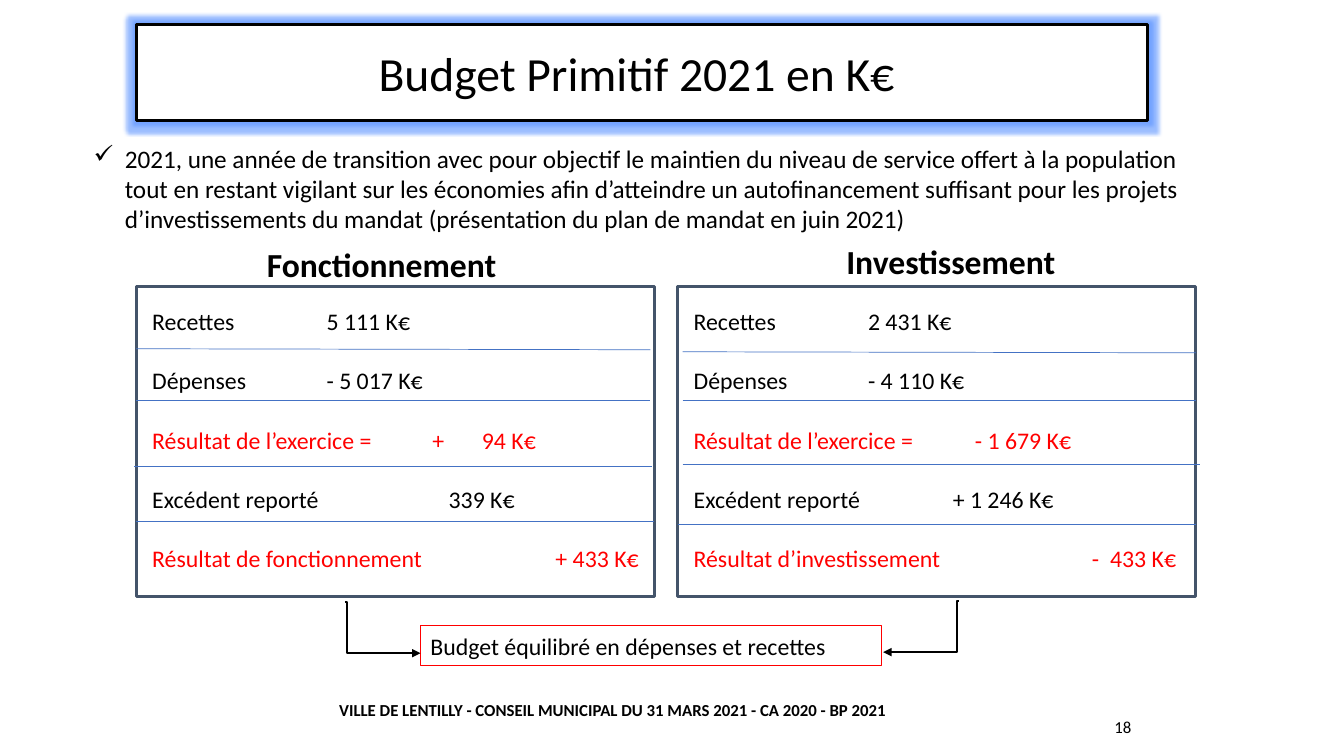
from dataclasses import dataclass

from lxml import etree
from pptx import Presentation
from pptx.dml import color
from pptx.enum import shapes, text
from pptx.oxml import ns
from pptx.util import Inches, Pt


@dataclass(frozen=True)
class Theme:
    font: str = "Calibri"
    black: str = "000000"
    white: str = "FFFFFF"
    red: str = "FF0000"
    frame: str = "44546A"
    rule: str = "4472C4"
    glow: str = "5B93FF"
    title: int = 34
    heading: int = 24
    body: int = 18
    row: int = 17
    footer: int = 12


@dataclass(frozen=True)
class Box:
    left: float
    top: float
    width: float
    height: float


@dataclass(frozen=True)
class Row:
    cells: tuple[str, ...]
    tabs: tuple[float, ...]
    result: bool = False


@dataclass(frozen=True)
class Panel:
    left: float
    heading: str
    heading_box: Box
    rows: tuple[Row, ...]
    rules: tuple[tuple[float, float, float, float], ...]  # x1, y1, x2, y2


THEME = Theme()
PANEL_TOP, PANEL_WIDTH, PANEL_HEIGHT = 2.84, 5.14, 3.08
CENTER, LEFT, RIGHT = text.PP_ALIGN.CENTER, text.PP_ALIGN.LEFT, text.PP_ALIGN.RIGHT

PANELS = (
    Panel(
        1.35, "Fonctionnement", Box(1.66, 2.26, 4.25, 0.72),
        (
            Row(("Recettes", "5 111 K€"), (1.73,)),
            Row(("Dépenses", "- 5 017 K€"), (1.73,)),
            Row(("Résultat de l’exercice =", "+", "94 K€"), (2.78, 3.27), True),
            Row(("Excédent reporté", "339 K€"), (2.94,)),
            Row(("Résultat de fonctionnement", "+ 433 K€"), (4.0,), True),
        ),
        ((1.35, 3.46, 6.45, 3.47), (1.35, 3.97, 6.45, 3.97),
         (1.33, 4.63, 6.47, 4.63), (1.35, 5.17, 6.49, 5.17)),
    ),
    Panel(
        6.72, "Investissement", Box(7.42, 2.23, 4.02, 0.72),
        (
            Row(("Recettes", "2 431 K€"), (1.73,)),
            Row(("Dépenses", "- 4 110 K€"), (1.73,)),
            Row(("Résultat de l’exercice =", "- 1 679 K€"), (2.79,), True),
            Row(("Excédent reporté", "+ 1 246 K€"), (2.57,)),
            Row(("Résultat d’investissement", "-", "433 K€"), (3.95, 4.13), True),
        ),
        ((6.77, 3.49, 11.86, 3.5), (6.77, 3.97, 11.86, 3.97),
         (6.77, 4.61, 11.9, 4.61), (6.72, 5.2, 11.86, 5.2)),
    ),
)


def rgb(value: str) -> color.RGBColor:
    return color.RGBColor.from_string(value)


def add_child(parent, tag: str, **attributes: str):
    child = etree.SubElement(parent, ns.qn(tag))
    for key, value in attributes.items():
        child.set(key, value)
    return child


def style(paragraph, size: int, ink: str = THEME.black, bold: bool = False) -> None:
    for run in paragraph.runs:
        run.font.name = THEME.font
        run.font.size = Pt(size)
        run.font.bold = bold
        run.font.color.rgb = rgb(ink)


def add_text(slide, box: Box, words: str, size: int, align=CENTER, bold: bool = False,
             anchor=text.MSO_ANCHOR.MIDDLE):
    label = slide.shapes.add_textbox(*map(Inches, (box.left, box.top, box.width, box.height)))
    frame = label.text_frame
    frame.word_wrap = True
    frame.vertical_anchor = anchor
    frame.text = words
    frame.paragraphs[0].alignment = align
    style(frame.paragraphs[0], size, bold=bold)
    return label


def add_frame(slide, box: Box, outline: str, weight: float, fill: bool = True):
    frame = slide.shapes.add_shape(
        shapes.MSO_SHAPE.RECTANGLE, *map(Inches, (box.left, box.top, box.width, box.height)))
    frame.shadow.inherit = False
    if fill:
        frame.fill.solid()
        frame.fill.fore_color.rgb = rgb(THEME.white)
    else:
        frame.fill.background()
    frame.line.color.rgb = rgb(outline)
    frame.line.width = Pt(weight)
    frame.text_frame.word_wrap = True
    frame.text_frame.vertical_anchor = text.MSO_ANCHOR.MIDDLE
    return frame


def add_line(slide, kind, ends: tuple[float, ...], ink: str, weight: float):
    line = slide.shapes.add_connector(kind, *map(Inches, ends))
    line.line.color.rgb = rgb(ink)
    line.line.width = Pt(weight)
    add_child(line._element.spPr, "a:effectLst")
    return line


def add_elbow_arrow(slide, ends: tuple[float, ...]) -> None:
    arrow = add_line(slide, shapes.MSO_CONNECTOR.ELBOW, ends, THEME.black, 1.5)
    add_child(arrow.line._get_or_add_ln(), "a:tailEnd", type="triangle")
    guides = arrow._element.spPr.find(".//" + ns.qn("a:avLst"))
    add_child(guides, "a:gd", name="adj1", fmla="val 2600")


def add_panel(slide, panel: Panel) -> None:
    add_text(slide, panel.heading_box, panel.heading, THEME.heading, bold=True)
    frame = add_frame(slide, Box(panel.left, PANEL_TOP, PANEL_WIDTH, PANEL_HEIGHT),
                      THEME.frame, 2.25).text_frame
    frame.margin_left = Inches(0.16)
    for index, row in enumerate(panel.rows):
        paragraph = frame.add_paragraph() if index else frame.paragraphs[0]
        paragraph.text = "\t".join(row.cells)
        paragraph.alignment = LEFT
        paragraph.line_spacing = 0.9
        paragraph.space_before = Pt(24 if index else 0)
        style(paragraph, THEME.row, THEME.red if row.result else THEME.black)
        stops = add_child(paragraph._p.get_or_add_pPr(), "a:tabLst")
        for stop in row.tabs:
            add_child(stops, "a:tab", pos=str(Inches(stop)), algn="l")
    for ends in panel.rules:
        add_line(slide, shapes.MSO_CONNECTOR.STRAIGHT, ends, THEME.rule, 0.5)


def add_title(slide) -> None:
    title = add_frame(slide, Box(1.35, 0.24, 10.03, 0.96), THEME.black, 2.25)
    title.text_frame.margin_right = Inches(0.2)
    title.text_frame.text = "Budget Primitif 2021 en K€"
    title.text_frame.paragraphs[0].alignment = CENTER
    style(title.text_frame.paragraphs[0], THEME.title)
    effects = title._element.spPr.find(ns.qn("a:effectLst"))
    glow = add_child(effects, "a:glow", rad=str(Inches(0.07)))
    add_child(add_child(glow, "a:srgbClr", val=THEME.glow), "a:alpha", val="60000")


def add_objective(slide) -> None:
    objective = add_text(
        slide, Box(0.83, 1.37, 11.07, 1.01),
        "2021, une année de transition avec pour objectif le maintien du niveau de service "
        "offert à la population tout en restant vigilant sur les économies afin d’atteindre "
        "un autofinancement suffisant pour les projets d’investissements du mandat "
        "(présentation du plan de mandat en juin 2021)",
        THEME.body, LEFT, anchor=text.MSO_ANCHOR.TOP)
    properties = objective.text_frame.paragraphs[0]._p.get_or_add_pPr()
    properties.set("marL", str(Inches(0.31)))
    properties.set("indent", str(Inches(-0.31)))
    add_child(properties, "a:buChar", char="✓")


def main() -> None:
    deck = Presentation()
    deck.slide_width, deck.slide_height = Inches(13.33), Inches(7.5)
    slide = deck.slides.add_slide(deck.slide_layouts[6])

    # Title and objective
    add_title(slide)
    add_objective(slide)

    # Budget sections
    for panel in PANELS:
        add_panel(slide, panel)

    # Balance statement, reached from both sections
    balance = add_frame(slide, Box(4.17, 6.21, 4.57, 0.39), THEME.red, 0.75, fill=False)
    balance.text_frame.text = "Budget équilibré en dépenses et recettes"
    balance.text_frame.paragraphs[0].alignment = LEFT
    style(balance.text_frame.paragraphs[0], THEME.row)
    add_elbow_arrow(slide, (3.42, 5.97, 4.17, 6.48))
    add_elbow_arrow(slide, (9.51, 5.96, 8.76, 6.47))

    # Footer and page number
    add_text(slide, Box(3.03, 6.84, 6.1, 0.4),
             "VILLE DE LENTILLY - CONSEIL MUNICIPAL DU 31 MARS 2021 - CA 2020 - BP 2021",
             THEME.footer, bold=True)
    add_text(slide, Box(10.76, 7.01, 0.56, 0.4), "18", THEME.footer, RIGHT)

    deck.save("out.pptx")


if __name__ == "__main__":
    main()
